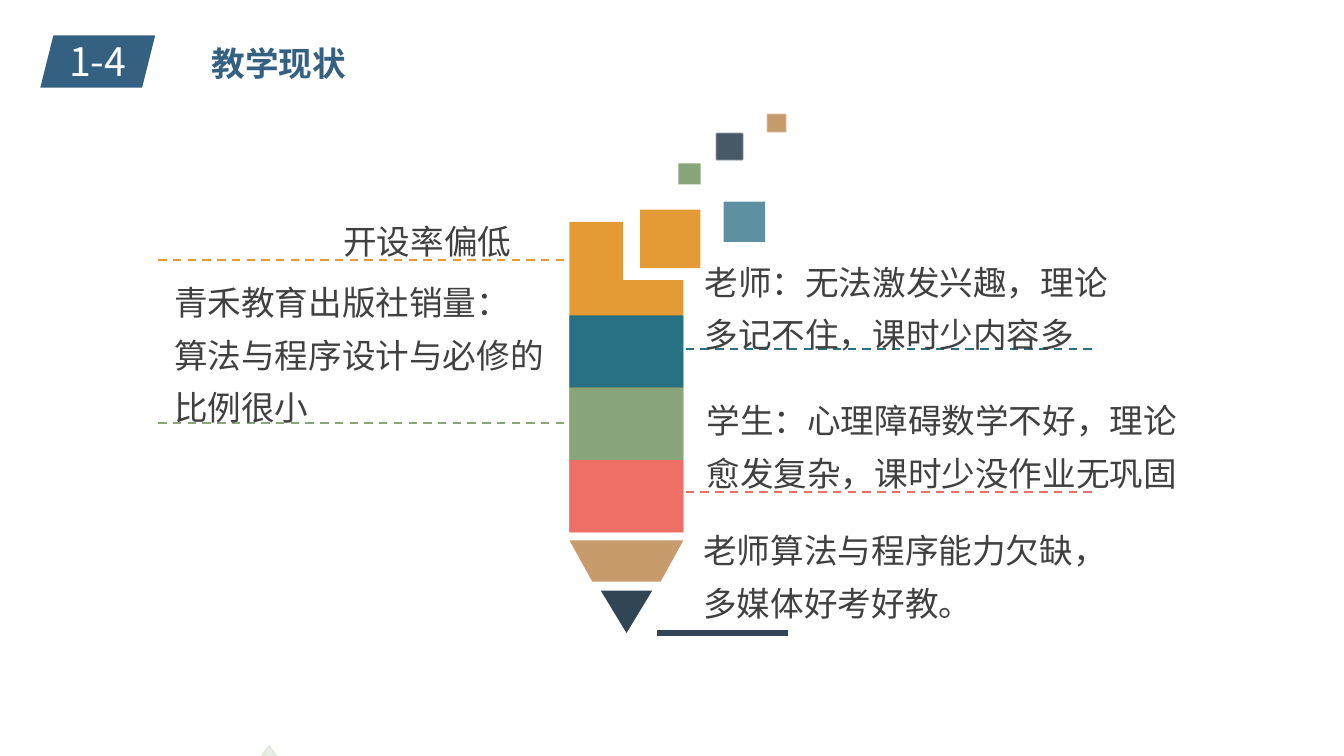
from lxml import etree
from pptx import Presentation, util as u
from pptx.dml.color import RGBColor
from pptx.enum import dml, shapes, text
from pptx.oxml import ns

CELL = u.Inches(0.1)
COLUMNS, ROWS = 133.33, 75
FONT = "Noto Sans CJK SC"
BLUE = RGBColor(0x34, 0x61, 0x82)
NAVY = RGBColor(0x32, 0x45, 0x54)
TAN = RGBColor(0xC7, 0x9B, 0x6C)
ORANGE = RGBColor(0xE4, 0x9B, 0x35)
GREEN = RGBColor(0x89, 0xA6, 0x7A)
TEAL = RGBColor(0x28, 0x71, 0x84)
CORAL = RGBColor(0xED, 0x6F, 0x65)
SKY = RGBColor(0x50, 0x87, 0x99)
SAGE = RGBColor(0xA2, 0xB8, 0x94)
PALE = RGBColor(0xE0, 0xE6, 0xD3)
GREY = RGBColor(0x40, 0x40, 0x40)
WHITE = RGBColor(0xFF, 0xFF, 0xFF)
KIND = shapes.MSO_SHAPE
ALIGN = text.PP_ALIGN

deck = Presentation()
deck.slide_width, deck.slide_height = int(COLUMNS * CELL), ROWS * CELL
page = deck.slides.add_slide(deck.slide_layouts[6])


def paint(shape, color, opacity=100, soft=False):
    shape.shadow.inherit = False
    shape.fill.solid()
    shape.fill.fore_color.rgb = color
    shape.line.fill.background()
    if opacity < 100:
        tint = shape._element.spPr.find(ns.qn("a:solidFill"))[0]
        etree.SubElement(tint, ns.qn("a:alpha")).set("val", str(opacity * 1000))
    if soft:
        effects = shape._element.spPr.find(ns.qn("a:effectLst"))
        etree.SubElement(effects, ns.qn("a:softEdge")).set("rad", "12700")


def write(area, lines, size=24, color=GREY, align=ALIGN.LEFT, spacing=1.3, bold=False, wrap=True):
    box = page.shapes.add_textbox(*(int(side * CELL) for side in area))
    frame = box.text_frame
    frame.word_wrap = wrap
    frame.auto_size = text.MSO_AUTO_SIZE.SHAPE_TO_FIT_TEXT
    for number, line in enumerate(lines):
        para = frame.add_paragraph() if number else frame.paragraphs[0]
        para.alignment = align
        para.line_spacing = spacing
        span = para.add_run()
        span.text = line
        span.font.name = FONT
        span.font.size = u.Pt(size)
        span.font.bold = bold
        span.font.color.rgb = color
        etree.SubElement(span.font._element, ns.qn("a:ea")).set("typeface", FONT)


outlines = [
    (SAGE, 25, [(26.7, 74), (27.8, 75.5), (25.6, 75.5)]),
    (ORANGE, 100, [(56.5, 22), (61.8, 22), (61.8, 27.8), (67.8, 27.8), (67.8, 52.8), (56.5, 52.8)]),
]
for color, opacity, corners in outlines:
    points = [(int(x * CELL), int(y * CELL)) for x, y in corners]
    builder = page.shapes.build_freeform(*points[0], scale=1.0)
    builder.add_line_segments(points[1:], close=True)
    outline = builder.convert_to_shape()
    paint(outline, color, opacity)
    if color == SAGE:
        outline.line.color.rgb = PALE
        outline.line.width = u.Pt(1)

BAND_TOP, BAND_HEIGHT = 31.3, 7.17
parts = [
    (KIND.PARALLELOGRAM, (4, 3.5, 11.4, 5.2), BLUE, 100, False),
    (KIND.ISOSCELES_TRIANGLE, (59.6, 58.6, 5.1, 4.2), NAVY, 100, False),
    (KIND.FLOWCHART_MANUAL_OPERATION, (56.5, 53.6, 11.3, 4.1), TAN, 100, False),
    (KIND.RECTANGLE, (63.5, 20.8, 6, 5.8), ORANGE, 100, False),
    (KIND.RECTANGLE, (67.3, 16.2, 2.2, 2.1), GREEN, 100, False),
    (KIND.RECTANGLE, (75.9, 11.2, 2.2, 2.1), TAN, 100, True),
    (KIND.RECTANGLE, (70.9, 13.1, 3, 2.9), NAVY, 89, True),
    (KIND.RECTANGLE, (71.8, 20, 4.1, 4), SKY, 92, False),
]
for row, color in enumerate([TEAL, GREEN, CORAL]):
    area = (56.5, BAND_TOP + row * BAND_HEIGHT, 11.3, BAND_HEIGHT)
    parts.append((KIND.RECTANGLE, area, color, 100, False))
for kind, area, color, opacity, soft in parts:
    part = page.shapes.add_shape(kind, *(int(side * CELL) for side in area))
    paint(part, color, opacity, soft)
    if kind == KIND.ISOSCELES_TRIANGLE:
        part.rotation = 180

rules = [
    (65.2, 78.2, 62.8, NAVY, 4.5),
    (15.7, 59.1, 25.8, ORANGE, 1.5),
    (15.7, 59.1, 42, GREEN, 1.5),
    (108.3, 64.9, 34.6, TEAL, 1.5),
    (108.3, 65, 48.8, CORAL, 1.5),
]
for start, end, level, color, weight in rules:
    ends = (int(side * CELL) for side in (start, level, end, level))
    rule = page.shapes.add_connector(shapes.MSO_CONNECTOR.STRAIGHT, *ends)
    rule.line.color.rgb = color
    rule.line.width = u.Pt(weight)
    if color != NAVY:
        rule.line.dash_style = dml.MSO_LINE.DASH
    etree.SubElement(rule._element.spPr, ns.qn("a:effectLst"))

write((4.1, 3.2, 11.2, 5.7), ["1-4"], size=28, color=WHITE, align=ALIGN.CENTER, spacing=1.0)
write((20, 3.8, 15.5, 5), ["教学现状"], color=BLUE, spacing=1.0, bold=True, wrap=False)
write((11.4, 20.2, 40.3, 6.3), ["开设率偏低"], align=ALIGN.RIGHT)
write((16.3, 26.3, 40.3, 16.8), ["青禾教育出版社销量：", "算法与程序设计与必修的比例很小"])
write((68.9, 24.3, 43.4, 11.5), ["老师：无法激发兴趣，理论多记不住，课时少内容多"])
write((69.1, 38, 51.5, 11.5), ["学生：心理障碍数学不好，理论愈发复杂，课时少没作业无巩固"])
write((68.8, 50.9, 40.3, 11.5), ["老师算法与程序能力欠缺，", "多媒体好考好教。"])

deck.save("out.pptx")
